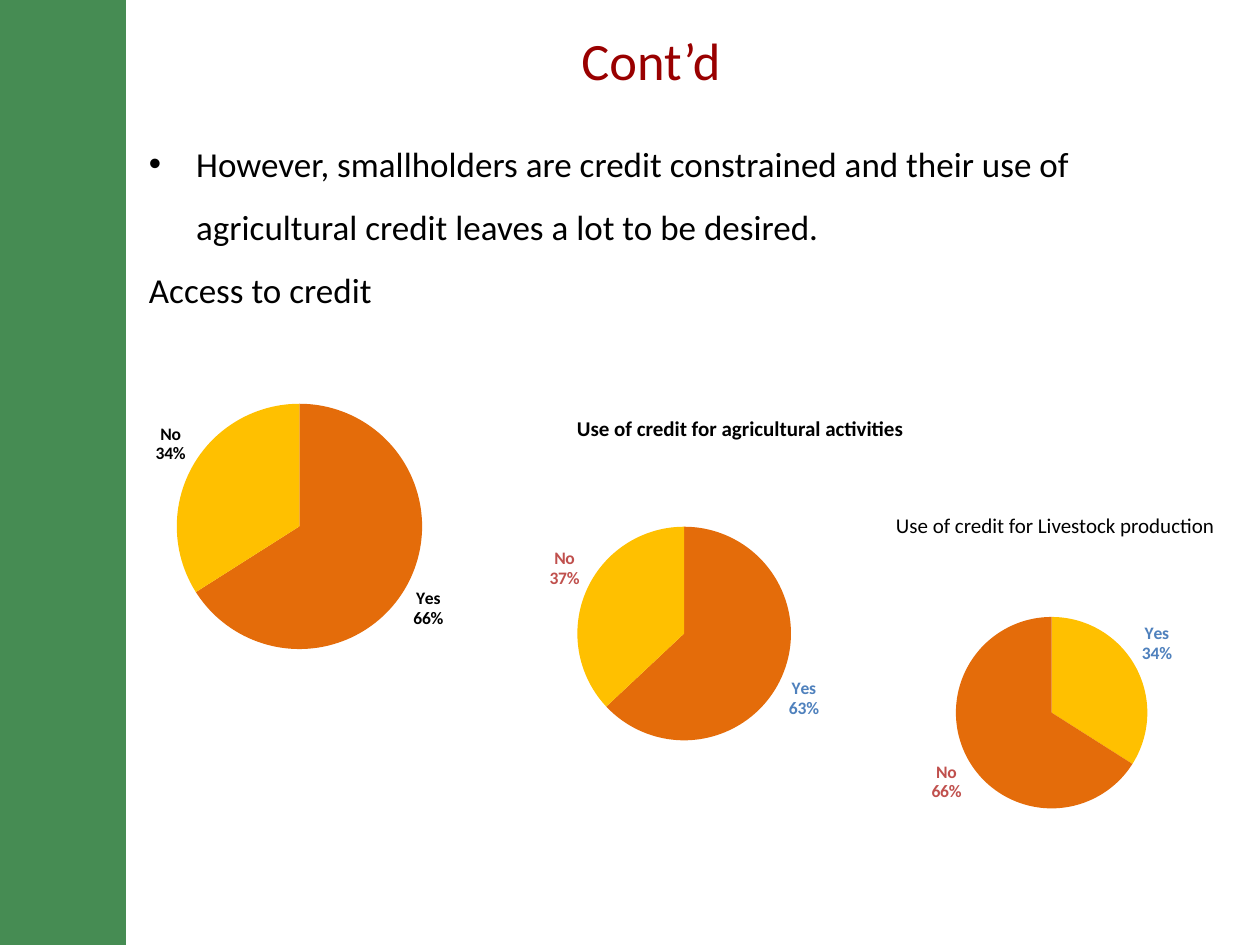
from dataclasses import dataclass

from lxml import etree
from pptx import Presentation
from pptx.chart.data import CategoryChartData
from pptx.dml.color import RGBColor
from pptx.enum.chart import XL_CHART_TYPE, XL_LABEL_POSITION
from pptx.enum.shapes import MSO_SHAPE
from pptx.enum.text import MSO_ANCHOR, PP_ALIGN
from pptx.oxml.ns import qn
from pptx.util import Pt

PIE = XL_CHART_TYPE.PIE
OUTSIDE_END = XL_LABEL_POSITION.OUTSIDE_END
RECTANGLE = MSO_SHAPE.RECTANGLE
MIDDLE = MSO_ANCHOR.MIDDLE
CENTER = PP_ALIGN.CENTER

FONT = "Calibri"
GREEN = RGBColor(0x46, 0x8C, 0x53)
DARK_RED = RGBColor(0x99, 0x00, 0x00)
BLACK = RGBColor(0x00, 0x00, 0x00)
ORANGE = RGBColor(0xE4, 0x6C, 0x0A)
YELLOW = RGBColor(0xFF, 0xC0, 0x00)
BLUE = RGBColor(0x4F, 0x81, 0xBD)
RED = RGBColor(0xC0, 0x50, 0x4D)


@dataclass
class Box:
    left: float
    top: float
    width: float
    height: float

    def lengths(self) -> list:
        return [Pt(v) for v in (self.left, self.top, self.width, self.height)]


@dataclass
class CreditPie:
    box: Box
    plot: Box  # fractions of the chart area
    values: tuple
    slice_colors: tuple
    label_colors: tuple


@dataclass
class Caption:
    box: Box
    text: str
    bold: bool


PIES = [
    CreditPie(Box(42, 216, 246, 168), Box(0.24, 0.02, 0.57, 0.97),
              (66, 34), (ORANGE, YELLOW), (BLACK, BLACK)),
    CreditPie(Box(270, 288, 222, 161), Box(0.27, 0, 0.55, 0.92),
              (63, 37), (ORANGE, YELLOW), (BLUE, RED)),
    CreditPie(Box(504, 322, 192, 158), Box(0.22, 0.19, 0.57, 0.7),
              (34, 66), (YELLOW, ORANGE), (BLUE, RED)),
]
CAPTIONS = [
    Caption(Box(312, 234, 222, 21.8), "Use of credit for agricultural activities", True),
    Caption(Box(492, 289.5, 222, 21.8), "Use of credit for Livestock production", False),
]


def style_font(font, size: float, color: RGBColor, bold: bool = False) -> None:
    font.name = FONT
    font.size = Pt(size)
    font.bold = bold
    font.color.rgb = color


def add_text(slide, box: Box, lines: list, size: float, bold: bool = False):
    text_frame = slide.shapes.add_textbox(*box.lengths()).text_frame
    text_frame.word_wrap = True
    text_frame.text = "\n".join(lines)
    for paragraph in text_frame.paragraphs:
        for run in paragraph.runs:
            style_font(run.font, size, BLACK, bold)
    return text_frame


def add_bullet(paragraph, indent: float) -> None:
    properties = paragraph._p.get_or_add_pPr()
    properties.set("marL", str(Pt(indent)))
    properties.set("indent", str(-Pt(indent)))
    etree.SubElement(properties, qn("a:buFont")).set("typeface", "Arial")
    etree.SubElement(properties, qn("a:buChar")).set("char", "•")


def set_plot_layout(chart, plot: Box) -> None:
    plot_area = chart.element.find(".//" + qn("c:plotArea"))
    for old_layout in plot_area.findall(qn("c:layout")):
        plot_area.remove(old_layout)
    layout = etree.Element(qn("c:layout"))
    plot_area.insert(0, layout)
    manual = etree.SubElement(layout, qn("c:manualLayout"))
    settings = {"layoutTarget": "inner", "xMode": "edge", "yMode": "edge",
                "x": plot.left, "y": plot.top, "w": plot.width, "h": plot.height}
    for tag, value in settings.items():
        etree.SubElement(manual, qn(f"c:{tag}")).set("val", str(value))


def show_category_and_percent(chart) -> None:
    for tag, value in (("showVal", "0"), ("showCatName", "1"), ("showPercent", "1")):
        for element in chart.element.iter(qn(f"c:{tag}")):
            element.set("val", value)
    for element in list(chart.element.iter(qn("c:showBubbleSize"))):
        separator = etree.Element(qn("c:separator"))
        separator.text = "\n"
        element.addnext(separator)


def add_pie(slide, pie: CreditPie) -> None:
    data = CategoryChartData()
    data.categories = ["Yes", "No"]
    data.add_series("Series 1", pie.values)
    chart = slide.shapes.add_chart(PIE, *pie.box.lengths(), data).chart
    chart.has_title = False
    chart.has_legend = False
    style_font(chart.font, 10, BLACK)
    chart.plots[0].vary_by_categories = True
    series = chart.plots[0].series[0]

    labels = series.data_labels
    labels.number_format = "0%"
    labels.number_format_is_linked = False
    labels.position = OUTSIDE_END
    for index, (fill, color) in enumerate(zip(pie.slice_colors, pie.label_colors)):
        point = series.points[index]
        point.format.fill.solid()
        point.format.fill.fore_color.rgb = fill
        point.format.line.fill.background()
        style_font(point.data_label.font, 10, color, bold=True)
        point.data_label.position = OUTSIDE_END
    show_category_and_percent(chart)
    set_plot_layout(chart, pie.plot)


def main() -> None:
    presentation = Presentation()
    presentation.slide_width, presentation.slide_height = Pt(720), Pt(540)
    slide = presentation.slides.add_slide(presentation.slide_layouts[5])

    # Side band
    band = slide.shapes.add_shape(RECTANGLE, *Box(0, 0, 72, 540).lengths())
    band.shadow.inherit = False
    band.fill.solid()
    band.fill.fore_color.rgb = GREEN
    band.line.fill.background()

    # Title
    title = slide.shapes.title
    title.left, title.top, title.width, title.height = Box(72, 12, 600, 44).lengths()
    title.text_frame.text = "Cont’d"
    title.text_frame.vertical_anchor = MIDDLE
    heading = title.text_frame.paragraphs[0]
    heading.alignment = CENTER
    style_font(heading.runs[0].font, 30, DARK_RED)

    # Body text
    body = add_text(slide, Box(78, 66, 636, 130), [
        "However, smallholders are credit constrained and their use of "
        "agricultural credit leaves a lot to be desired.",
        "Access to credit",
    ], 20)
    for paragraph in body.paragraphs:
        paragraph.space_after = Pt(12)
    body.paragraphs[0].line_spacing = 1.5
    add_bullet(body.paragraphs[0], 27)

    # Pie charts and their captions
    for pie in PIES:
        add_pie(slide, pie)
    for caption in CAPTIONS:
        text_frame = add_text(slide, caption.box, [caption.text], 12, caption.bold)
        text_frame.paragraphs[0].alignment = CENTER

    presentation.save("out.pptx")


if __name__ == "__main__":
    main()
